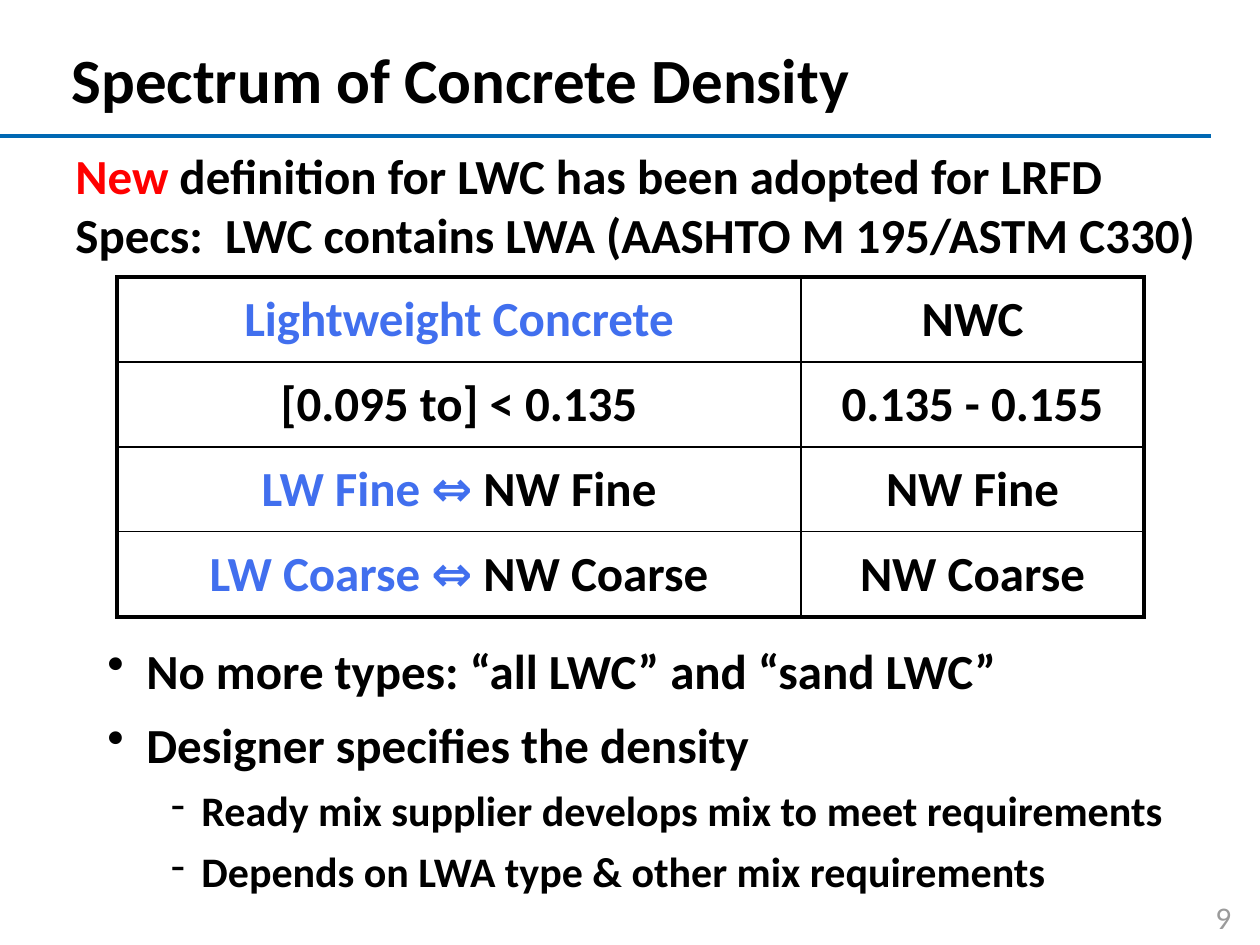
from lxml.etree import SubElement
from pptx import Presentation
from pptx.dml.color import RGBColor as RGB
from pptx.enum.shapes import MSO_CONNECTOR as Conn
from pptx.enum.text import MSO_ANCHOR as Anchor, PP_ALIGN as Align
from pptx.oxml.ns import qn
from pptx.util import Emu, Pt

BLACK = RGB(0x00, 0x00, 0x00)
RED = RGB(0xFF, 0x00, 0x00)
BLUE = RGB(0x41, 0x6F, 0xEE)
RULE = RGB(0x00, 0x68, 0xB3)
GRAY = RGB(0x9B, 0x9B, 0x9B)

# One row per table line; each cell is a list of (text, colour) runs.
ROWS = [
    ([("Lightweight Concrete", BLUE)], [("NWC", BLACK)]),
    ([("[0.095 to] < 0.135", BLACK)], [("0.135 - 0.155", BLACK)]),
    ([("LW Fine ⇔ ", BLUE), ("NW Fine", BLACK)], [("NW Fine", BLACK)]),
    ([("LW Coarse ⇔ ", BLUE), ("NW Coarse", BLACK)], [("NW Coarse", BLACK)]),
]
LEAD = [
    ("New", RED),
    (" definition for LWC has been adopted for LRFD Specs:  "
     "LWC contains LWA (AASHTO M 195/ASTM C330)", BLACK),
]
POINTS = [
    (0, "No more types: “all LWC” and “sand LWC”"),
    (0, "Designer specifies the density"),
    (1, "Ready mix supplier develops mix to meet requirements"),
    (1, "Depends on LWA type & other mix requirements"),
]
# Per level: font size, space before, left margin px, hanging px, bullet.
LEVELS = [(28, 9, 71, 39, "•"), (24, 6, 126, 31, "‐")]


def px(num):
    return Emu(round(num * 914400 / 126))


class Deck:
    font = "Calibri"
    thick, thin = 2.25, 0.75

    def __init__(self, wide, high):
        self.prs = Presentation()
        self.prs.slide_width, self.prs.slide_height = px(wide), px(high)
        self.slide = self.prs.slides.add_slide(self.prs.slide_layouts[5])

    def put(self, par, runs, size, bold=True, align=Align.LEFT):
        """Fill a paragraph with (text, colour) runs."""
        par.alignment = align
        font = par.font
        font.name, font.size, font.bold = self.font, Pt(size), bold
        same = len({color for _, color in runs}) == 1
        if same:
            font.color.rgb = runs[0][1]
        for text, color in runs:
            run = par.add_run()
            run.text = text
            if not same:
                run.font.color.rgb = color

    def title(self, text, x, y, w, h):
        box = self.slide.shapes.title
        box.left, box.top, box.width, box.height = map(px, (x, y, w, h))
        frame = box.text_frame
        frame.vertical_anchor = Anchor.MIDDLE
        par = frame.paragraphs[0]
        par.line_spacing = 0.9
        self.put(par, [(text, BLACK)], 36)

    def rule(self, x, y, end):
        line = self.slide.shapes.add_connector(
            Conn.STRAIGHT, px(x), px(y), px(end), px(y))
        line.line.color.rgb = RULE
        line.line.width = Pt(2.5)
        SubElement(line._element.spPr, qn("a:effectLst"))

    def frame(self, x, y, w, h):
        """Add a wrapping text box and return its text frame."""
        box = self.slide.shapes.add_textbox(*map(px, (x, y, w, h)))
        box.text_frame.word_wrap = True
        return box.text_frame

    def text(self, runs, x, y, w, h, size, **style):
        par = self.frame(x, y, w, h).paragraphs[0]
        self.put(par, runs, size, **style)

    def bullets(self, items, x, y, w, h):
        frame = self.frame(x, y, w, h)
        for i, (level, text) in enumerate(items):
            size, gap, left, hang, mark = LEVELS[level]
            par = frame.add_paragraph() if i else frame.paragraphs[0]
            par.level = level
            par.space_before = Pt(gap)
            props = par._p.get_or_add_pPr()
            props.set("marL", str(px(left)))
            props.set("indent", str(px(-hang)))
            SubElement(props, qn("a:buChar"), char=mark)
            self.put(par, [(text, BLACK)], size)

    def edge(self, cell, side, width):
        line = SubElement(cell._tc.get_or_add_tcPr(), qn("a:ln" + side),
                          w=str(Pt(width)))
        fill = SubElement(line, qn("a:solidFill"))
        SubElement(fill, qn("a:srgbClr"), val=str(BLACK))

    def table(self, rows, x, y, cols, high):
        """Draw a grid with a thick frame and thin inner lines."""
        grid = self.slide.shapes.add_table(
            len(rows), len(cols), px(x), px(y),
            px(sum(cols)), px(high * len(rows))).table
        grid.first_row = grid.horz_banding = False
        for col, wide in zip(grid.columns, cols):
            col.width = px(wide)
        for r, row in enumerate(rows):
            for c, runs in enumerate(row):
                cell = grid.cell(r, c)
                cell.vertical_anchor = Anchor.MIDDLE
                self.put(cell.text_frame.paragraphs[0], runs, 28,
                         align=Align.CENTER)
                outer = {"L": c == 0, "R": c == len(cols) - 1,
                         "T": r == 0, "B": r == len(rows) - 1}
                for side, out in outer.items():
                    self.edge(cell, side, self.thick if out else self.thin)
                cell.fill.background()


def main():
    deck = Deck(1260, 945)
    deck.rule(0, 136, 1211)
    deck.text([("9", GRAY)], 1187, 892, 73, 53, 18,
              bold=False, align=Align.CENTER)
    deck.title("Spectrum of Concrete Density", 59, 40, 1144, 86)
    deck.text(LEAD, 63, 139, 1168, 132, 28)
    deck.bullets(POINTS, 63, 634, 1168, 265)
    deck.table(ROWS, 117, 277, (684, 343), 85)
    deck.prs.save("out.pptx")


if __name__ == "__main__":
    main()
